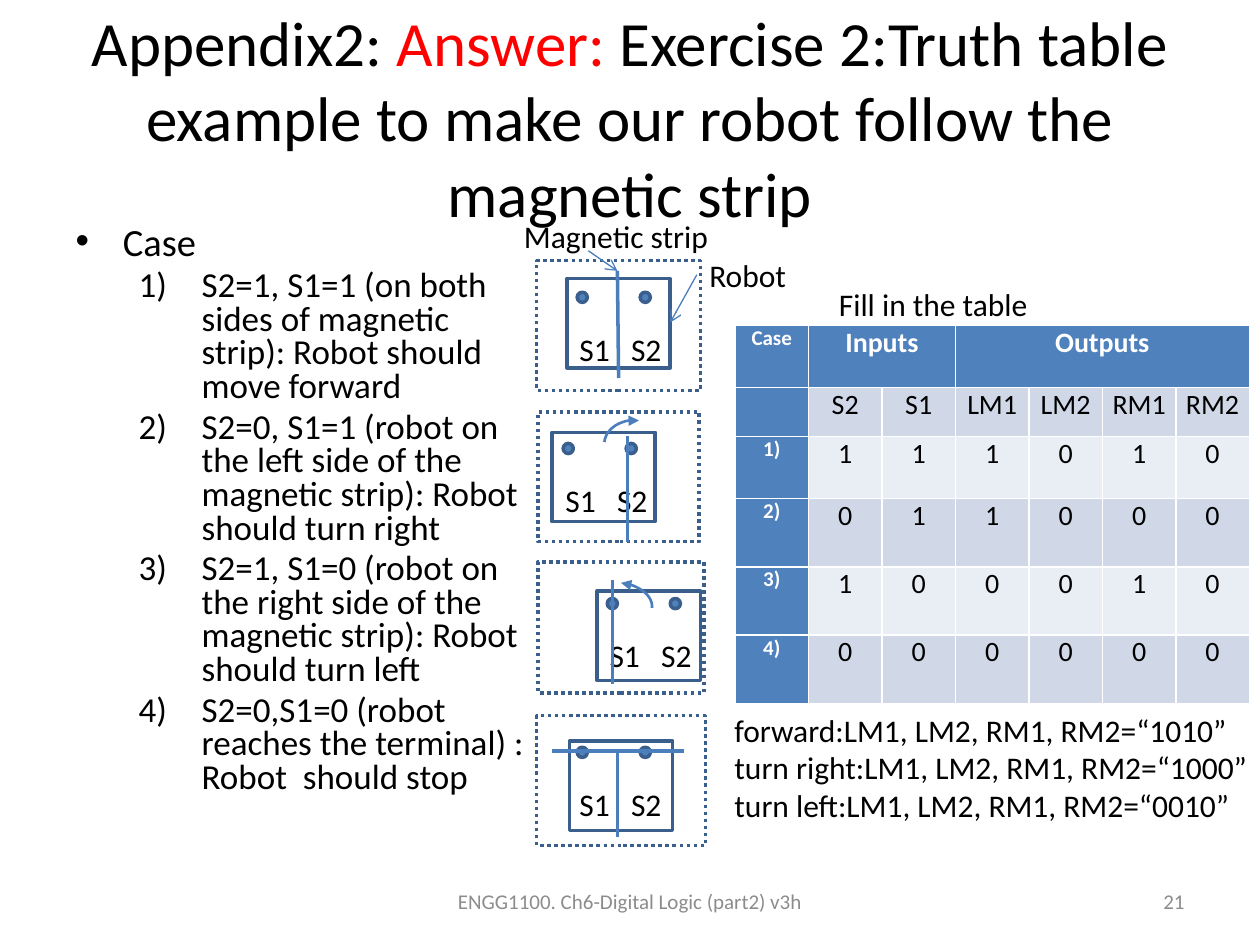
from lxml import etree
from pptx import Presentation
from pptx.dml.color import RGBColor
from pptx.enum.dml import MSO_LINE
from pptx.enum.shapes import MSO_CONNECTOR, MSO_SHAPE
from pptx.enum.text import MSO_ANCHOR, MSO_AUTO_SIZE, PP_ALIGN
from pptx.oxml.ns import qn
from pptx.util import Pt

BLACK = RGBColor(0x00, 0x00, 0x00)
WHITE = RGBColor(0xFF, 0xFF, 0xFF)
RED = RGBColor(0xFF, 0x00, 0x00)
GREY = RGBColor(0x8C, 0x8C, 0x8C)
BLUE = RGBColor(0x4F, 0x81, 0xBD)
LINE_BLUE = RGBColor(0x4B, 0x7E, 0xBC)
DARK_BLUE = RGBColor(0x3A, 0x5F, 0x8C)
BAND_DARK = RGBColor(0xD0, 0xD8, 0xE8)
BAND_LIGHT = RGBColor(0xE9, 0xED, 0xF4)
LEFT, CENTER, RIGHT = PP_ALIGN.LEFT, PP_ALIGN.CENTER, PP_ALIGN.RIGHT
TOP, MIDDLE = MSO_ANCHOR.TOP, MSO_ANCHOR.MIDDLE
NO_AUTOFIT = MSO_AUTO_SIZE.NONE
RECTANGLE, OVAL, ARC = MSO_SHAPE.RECTANGLE, MSO_SHAPE.OVAL, MSO_SHAPE.ARC
STRAIGHT, DOTTED = MSO_CONNECTOR.STRAIGHT, MSO_LINE.ROUND_DOT
FONT = "Calibri"

deck = Presentation()
deck.slide_width, deck.slide_height = Pt(720), Pt(540)
page = deck.slides.add_slide(deck.slide_layouts[1])
shapes = page.shapes


def add_text(lines, bounds, size=18, color=BLACK, align=LEFT, anchor=TOP):
    box = shapes.add_textbox(*map(Pt, bounds))
    frame = box.text_frame
    frame.word_wrap = True
    frame.vertical_anchor = anchor
    frame.text = lines
    for para in frame.paragraphs:
        para.alignment = align
        para.font.name, para.font.size = FONT, Pt(size)
        para.font.color.rgb = color
    return box


def add_outline(kind, bounds, color=DARK_BLUE, width=2, fill=None):
    shape = shapes.add_shape(kind, *map(Pt, bounds))
    shape.shadow.inherit = False
    if fill is None:
        shape.fill.background()
    else:
        shape.fill.solid()
        shape.fill.fore_color.rgb = fill
    shape.line.color.rgb, shape.line.width = color, Pt(width)
    return shape


# Title
title = shapes.title
title.left, title.top, title.width, title.height = Pt(36), Pt(21.6), Pt(648), Pt(90)
title.text_frame.auto_size = NO_AUTOFIT
title.text_frame.vertical_anchor = MIDDLE
para = title.text_frame.paragraphs[0]
para.alignment = CENTER
para.font.name, para.font.size = FONT, Pt(36)
for text, color in [
    ("Appendix2: ", BLACK),
    ("Answer: ", RED),
    ("Exercise 2:Truth table example to make our robot follow the magnetic strip", BLACK),
]:
    span = para.add_run()
    span.text = text
    span.font.color.rgb = color

# List of cases
body = page.placeholders[1]
body.left, body.top, body.width, body.height = Pt(36), Pt(126), Pt(273), Pt(356.4)
body.text_frame.auto_size = NO_AUTOFIT
body.text_frame.text = "\n".join([
    "Case",
    "S2=1, S1=1 (on both sides of magnetic strip): Robot should move forward",
    "S2=0, S1=1 (robot on the left side of the magnetic strip): Robot should turn right",
    "S2=1, S1=0 (robot on the right side of the magnetic strip): Robot should turn left",
    "S2=0,S1=0 (robot reaches the terminal) : Robot  should stop",
])
for index, para in enumerate(body.text_frame.paragraphs):
    para.line_spacing = 0.8
    para.font.name, para.font.size = FONT, Pt(20 if index else 22)
    para.font.color.rgb = BLACK
    if index:
        para.level = 1
        properties = para._p.get_or_add_pPr()
        properties.set("marL", str(Pt(72)))
        properties.set("indent", str(-Pt(36)))
        etree.SubElement(properties, qn("a:buFont"), typeface="+mj-lt")
        etree.SubElement(properties, qn("a:buAutoNum"), type="arabicParenR")
        # The numbering must come before the paragraph's default run properties.
        properties.append(properties.find(qn("a:defRPr")))

# Truth table
table_rows = [
    ["Case", "Inputs", "", "Outputs", "", "", ""],
    ["", "S2", "S1", "LM1", "LM2", "RM1", "RM2"],
    ["1)", "1", "1", "1", "0", "1", "0"],
    ["2)", "0", "1", "1", "0", "0", "0"],
    ["3)", "1", "0", "0", "0", "1", "0"],
    ["4)", "0", "0", "0", "0", "0", "0"],
]
row_heights = [35.5, 28, 35.5, 39, 39, 39]
table = shapes.add_table(6, 7, Pt(420), Pt(186), Pt(294), Pt(sum(row_heights))).table
table.first_col = True
for column in table.columns:
    column.width = Pt(42)
for row_index, (texts, height) in enumerate(zip(table_rows, row_heights)):
    table.rows[row_index].height = Pt(height)
    for column_index, text in enumerate(texts):
        cell = table.cell(row_index, column_index)
        heading = row_index == 0 or column_index == 0
        cell.margin_left = cell.margin_right = Pt(5)
        cell.margin_top = cell.margin_bottom = 0
        cell.fill.solid()
        band = BAND_DARK if row_index % 2 else BAND_LIGHT
        cell.fill.fore_color.rgb = BLUE if heading else band
        cell.text = text
        para = cell.text_frame.paragraphs[0]
        para.alignment = CENTER
        para.font.name, para.font.size = FONT, Pt(16 if column_index else 12)
        para.font.bold = heading
        para.font.color.rgb = WHITE if heading else BLACK
table.cell(0, 1).merge(table.cell(0, 2))
table.cell(0, 3).merge(table.cell(0, 6))

# Robots: frame, body, first sensor
robots = [
    ((306.7, 149, 93.6, 74.2), (324, 159.1), (329.8, 167)),
    ((307.4, 235.4, 92.2, 74.2), (315.4, 247), (321.8, 253.4)),
    ((307.4, 321.1, 95, 74.9), (341.3, 337.7), (347, 342)),
    ((306.7, 409, 96.5, 74.2), (325.4, 423.4), (329.8, 427)),
]
for frame_bounds, corner, (sensor_x, sensor_y) in robots:
    add_outline(RECTANGLE, frame_bounds).line.dash_style = DOTTED
    add_outline(RECTANGLE, (*corner, 59, 51.1))
    for x in (sensor_x, sensor_x + 36):
        add_outline(OVAL, (x, sensor_y, 5.8, 5.8), fill=BLUE)
    label = add_text("S1\tS2", (sensor_x - 5.8, sensor_y + 18, 70, 29))
    properties = label.text_frame.paragraphs[0]._p.get_or_add_pPr()
    tabs = etree.Element(qn("a:tabLst"))
    etree.SubElement(tabs, qn("a:tab"), pos=str(Pt(29.5)), algn="l")
    properties.insert(0, tabs)

# Magnetic strips, then the two pointers
for ends, width, arrow in [
    ((352.8, 154.8, 353.5, 216), 2, False),
    ((358.6, 249.1, 358.6, 309.6), 2, False),
    ((349.9, 331.2, 349.9, 391), 2, False),
    ((352.8, 429.8, 352.8, 478.1), 2, False),
    ((315.4, 429.1, 391, 429.1), 2, False),
    ((336.2, 143.3, 352.8, 154.8), 0.75, True),
    ((398.2, 157, 383, 184.3), 0.75, True),
]:
    line = shapes.add_connector(STRAIGHT, *map(Pt, ends))
    line.line.color.rgb, line.line.width = LINE_BLUE, Pt(width)
    etree.SubElement(line._element.spPr, qn("a:effectLst"))
    if arrow:
        etree.SubElement(line.line._get_or_add_ln(), qn("a:tailEnd"), type="arrow")

# Turning arrows
for bounds, flipped in [((349.2, 236.2, 28.8, 36.7), False), ((341.3, 326.2, 24.5, 38.2), True)]:
    turn = add_outline(ARC, bounds, LINE_BLUE, 1.5)
    turn.rotation = 276.1
    etree.SubElement(turn.line._get_or_add_ln(), qn("a:tailEnd"), type="triangle")
    if flipped:
        turn._element.spPr.find(qn("a:xfrm")).set("flipV", "1")

# Captions, motor commands and footer
add_text("Magnetic strip", (292.3, 120.2, 121, 29))
add_text("Robot", (398.2, 142.6, 59, 29))
add_text("Fill in the table", (472.3, 159.1, 124, 29))
add_text(
    "forward:LM1, LM2, RM1, RM2=“1010”\n"
    "turn right:LM1, LM2, RM1, RM2=“1000”\n"
    "turn left:LM1, LM2, RM1, RM2=“0010”",
    (412.6, 402.5, 311, 72.7),
)
add_text("ENGG1100. Ch6-Digital Logic (part2) v3h", (246, 500.4, 228, 28.8), 12, GREY, CENTER, MIDDLE)
add_text("21", (516, 500.4, 168, 28.8), 12, GREY, RIGHT, MIDDLE)

deck.save("out.pptx")
